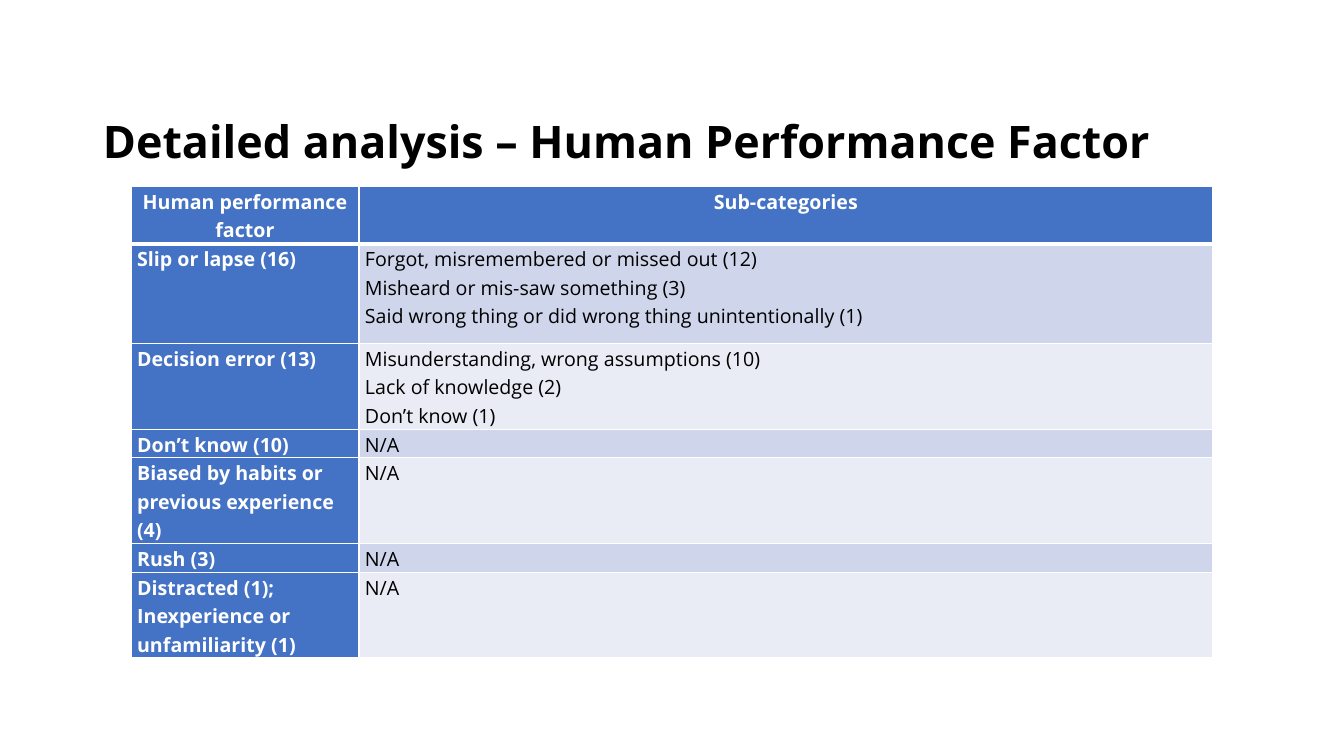
from lxml.etree import SubElement
from pptx import Presentation
from pptx.dml.color import RGBColor
from pptx.enum.text import MSO_ANCHOR as Anchor, MSO_AUTO_SIZE as AutoSize, PP_ALIGN as Align
from pptx.oxml.ns import qn
from pptx.util import Inches, Pt

BLACK = RGBColor(0x00, 0x00, 0x00)
WHITE = RGBColor(0xFF, 0xFF, 0xFF)
BLUE = RGBColor(0x44, 0x72, 0xC4)
BANDS = RGBColor(0xCF, 0xD5, 0xEA), RGBColor(0xE9, 0xEB, 0xF5)

FACTORS = [
    ("Human performance factor", ["Sub-categories"], 0.54),
    ("Slip or lapse (16)", [
        "Forgot, misremembered or missed out (12)",
        "Misheard or mis-saw something (3)",
        "Said wrong thing or did wrong thing unintentionally (1)",
    ], 0.99),
    ("Decision error (13)", [
        "Misunderstanding, wrong assumptions (10)",
        "Lack of knowledge (2)",
        "Don’t know (1)",
    ], 0.82),
    ("Don’t know (10)", ["N/A"], 0.28),
    ("Biased by habits or previous experience (4)", ["N/A"], 0.82),
    ("Rush (3)", ["N/A"], 0.26),
    ("Distracted (1); Inexperience or unfamiliarity (1)", ["N/A"], 0.82),
]


def apply(target, values):
    for name, value in values.items():
        setattr(target, name, value)


class SlideBuilder:
    font_name = "Open Sans"

    def __init__(self, deck):
        self.page = deck.slides.add_slide(deck.slide_layouts[5])

    def fill_text(self, frame, lines, size, color, bold, align, spacing):
        frame.text = "\n".join(lines)
        for para in frame.paragraphs:
            apply(para, {"alignment": align, "line_spacing": spacing})
            for span in para.runs:
                apply(span.font, {"name": self.font_name, "size": Pt(size), "bold": bold})
                span.font.color.rgb = color

    def title(self, text, left, top, width, height):
        box = self.page.shapes.title
        apply(box, {"left": Inches(left), "top": Inches(top),
                    "width": Inches(width), "height": Inches(height)})
        apply(box.text_frame, {"word_wrap": True, "auto_size": AutoSize.NONE,
                               "vertical_anchor": Anchor.MIDDLE})
        self.fill_text(box.text_frame, [text], 32, BLACK, True, Align.LEFT, 0.9)

    def border(self, cell, widths):
        properties = cell._tc.get_or_add_tcPr()
        for side, width in widths.items():
            line = SubElement(properties, qn(f"a:ln{side}"), w=str(Pt(width)))
            fill = SubElement(line, qn("a:solidFill"))
            SubElement(fill, qn("a:srgbClr"), val=str(WHITE))

    def cell(self, cell, lines, row, column):
        header = row == 0
        strong = header or column == 0
        apply(cell, {"margin_left": Inches(0.06), "margin_right": Inches(0.06),
                     "margin_top": 0, "margin_bottom": 0})
        self.border(cell, {"L": 1, "R": 1, "T": 3 if row == 1 else 1, "B": 3 if header else 1})
        cell.fill.solid()
        cell.fill.fore_color.rgb = BLUE if strong else BANDS[(row - 1) % 2]
        self.fill_text(cell.text_frame, lines, 14, WHITE if strong else BLACK, strong,
                       Align.CENTER if header else Align.LEFT, 1.07)

    def table(self, rows, left, top, widths):
        height = sum(row[-1] for row in rows)
        table = self.page.shapes.add_table(
            len(rows), len(widths), Inches(left), Inches(top),
            Inches(sum(widths)), Inches(height)).table
        for column, width in zip(table.columns, widths):
            column.width = Inches(width)
        for index, (factor, categories, row_height) in enumerate(rows):
            table.rows[index].height = Inches(row_height)
            for column, lines in enumerate(([factor], categories)):
                self.cell(table.cell(index, column), lines, index, column)


def main():
    deck = Presentation()
    apply(deck, {"slide_width": Inches(13.33), "slide_height": Inches(7.5)})
    builder = SlideBuilder(deck)
    builder.title("Detailed analysis – Human Performance Factor", 0.92, 1.01, 11.5, 0.84)
    builder.table(FACTORS, 1.3, 1.85, (2.26, 8.47))
    deck.save("out.pptx")


if __name__ == "__main__":
    main()
